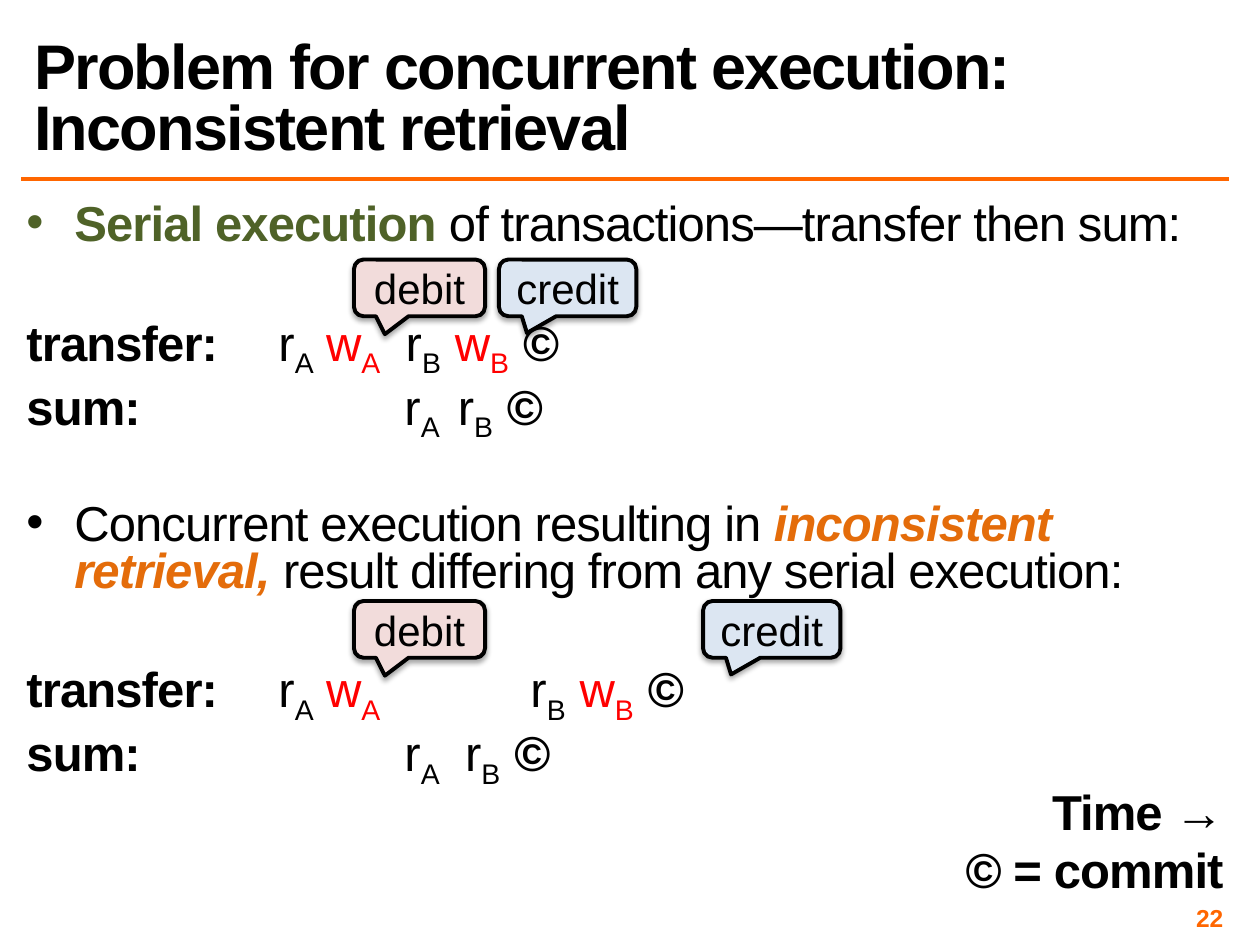
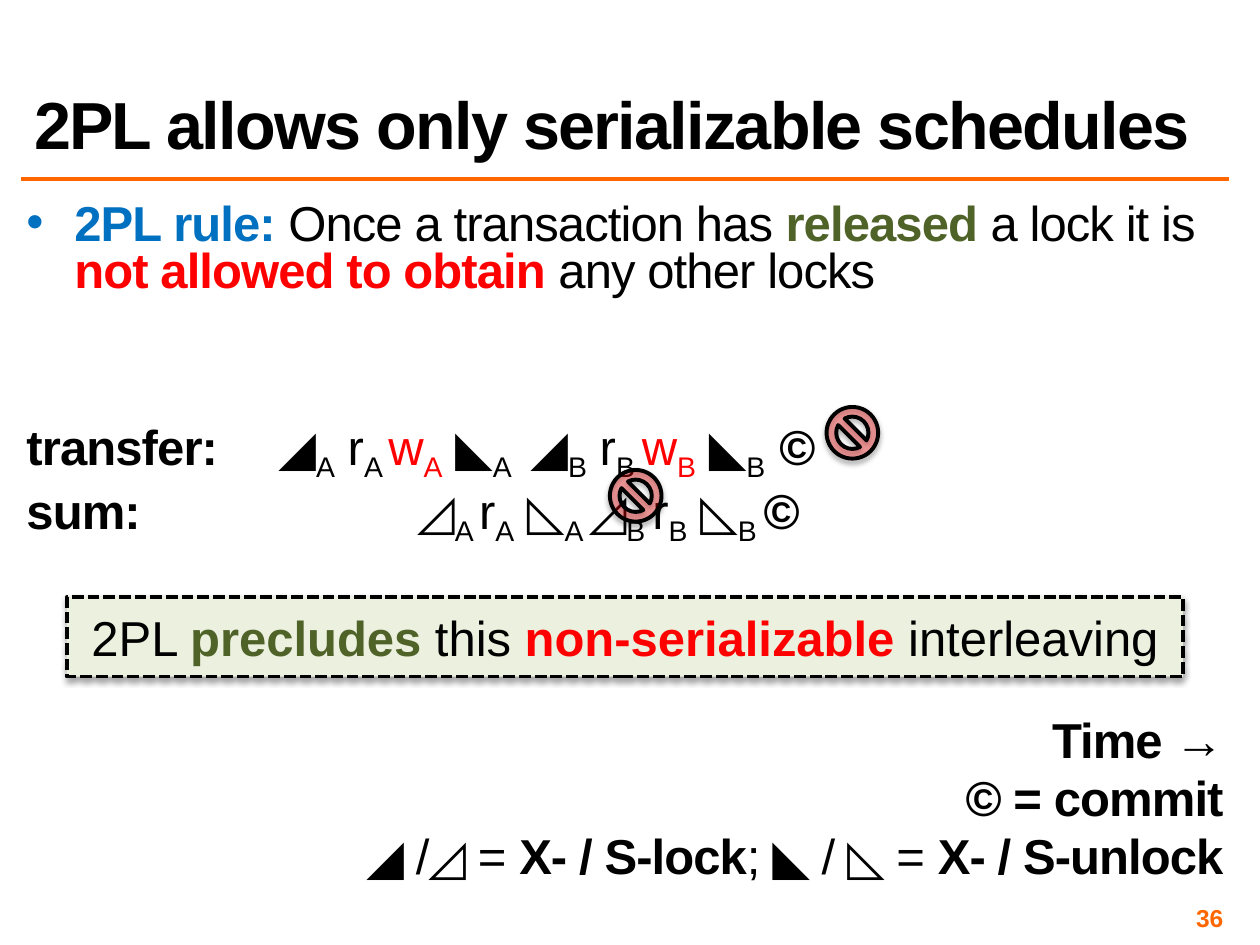
from lxml import etree
from pptx import Presentation
from pptx import util as u
from pptx.dml.color import RGBColor
from pptx.enum import dml, shapes, text
from pptx.oxml import ns

BLACK = RGBColor(0x00, 0x00, 0x00)
ORANGE = RGBColor(0xFF, 0x66, 0x00)
AMBER = RGBColor(0xE4, 0x6C, 0x0A)
GREEN = RGBColor(0x4F, 0x62, 0x28)
BLUE = RGBColor(0x00, 0x70, 0xC0)
RED = RGBColor(0xFF, 0x00, 0x00)
PINK = RGBColor(0xF2, 0xDC, 0xDB)
SKY = RGBColor(0xDC, 0xE6, 0xF2)
LIME = RGBColor(0xEB, 0xF1, 0xDE)

STEP = 6
BLANK = 32.5

BOLD = dict(bold=True)
SUB = dict(base=-25)
HOT = dict(color=RED)
LOW = dict(color=RED, base=-25)
PLAIN = {}


def write(para, words, size=28, color=BLACK, bold=False, italic=False, base=0, spc=0):
    run = para.add_run()
    run.text = words
    font = run.font
    font.name, font.size = "Arial", u.Pt(size)
    font.bold, font.italic = bold, italic
    font.color.rgb = color
    props = run._r.get_or_add_rPr()
    if base:
        props.set("baseline", str(base * 1000))
    if spc:
        props.set("spc", str(int(spc * 100)))


def style(shape, fill, alpha=100):
    shape.fill.solid()
    shape.fill.fore_color.rgb = fill
    shape.line.color.rgb = BLACK
    shape.line.width = u.Pt(2.25)
    if alpha < 100:
        tint = shape._element.spPr.find(ns.qn("a:solidFill"))[0]
        etree.SubElement(tint, ns.qn("a:alpha")).set("val", str(alpha * 1000))
    shape.shadow.inherit = False
    glow = shape._element.spPr.find(ns.qn("a:effectLst"))
    drop = etree.SubElement(glow, ns.qn("a:outerShdw"), blurRad=str(u.Pt(3.1)),
                            dist=str(u.Pt(1.8)), dir="5400000", rotWithShape="0")
    shade = etree.SubElement(drop, ns.qn("a:srgbClr"), val="000000")
    etree.SubElement(shade, ns.qn("a:alpha"), val="35000")


TIME = [("Time →", BOLD)]
DONE = [("© = commit", BOLD)]

pages = [
    dict(title="Problem for concurrent execution: Inconsistent retrieval", size=36, num="22", body=[
        ("list", 0, [], [("Serial execution ", dict(color=GREEN, bold=True)),
                         ("of transactions—transfer then sum:", PLAIN)]),
        ("row", 1, [1, 2], [("transfer: \t", BOLD), ("r", PLAIN), ("A  ", SUB), ("w", HOT), ("A", LOW),
                            ("  r", PLAIN), ("B  ", SUB), ("w", HOT), ("B  ", LOW), ("©", BOLD)]),
        ("row", 0, [1, 2], [("sum: \t\t", BOLD), ("r", PLAIN), ("A ", SUB), (" r", PLAIN),
                            ("B  ", SUB), ("©", BOLD)]),
        ("list", 1, [], [("Concurrent execution resulting in ", PLAIN),
                         ("inconsistent retrieval, ", dict(color=AMBER, bold=True, italic=True)),
                         ("result differing from any serial execution:", PLAIN)]),
        ("row", 1, [1, 2, 4], [("transfer: \t", BOLD), ("r", PLAIN), ("A  ", SUB), ("w", HOT), ("A", LOW),
                               ("  \tr", PLAIN), ("B  ", SUB), ("w", HOT), ("B  ", LOW), ("©", BOLD)]),
        ("row", 0, [1, 2], [("sum: \t\t", BOLD), ("r", PLAIN), ("A", SUB), ("  r", PLAIN),
                            ("B  ", SUB), ("©", BOLD)]),
        ("key", 0, [], TIME),
        ("key", 0, [], DONE),
    ]),
    dict(title="2PL allows only serializable schedules", size=38, num="36", body=[
        ("list", 0, [], [("2PL rule:", dict(color=BLUE, bold=True)), (" Once a transaction has ", PLAIN),
                         ("released ", dict(color=GREEN, bold=True)), ("a lock it is ", PLAIN),
                         ("not allowed to obtain ", dict(color=RED, bold=True)), ("any other locks", PLAIN)]),
        ("row", 2, [1, 2, 5], [("transfer:", BOLD), (" \t◢", PLAIN), ("A", SUB), (" r", PLAIN), ("A ", SUB),
                               ("w", HOT), ("A", LOW), (" ◣", PLAIN), ("A", SUB), (" \t◢", PLAIN), ("B", SUB),
                               (" r", PLAIN), ("B ", SUB), ("w", HOT), ("B", LOW), (" ◣", PLAIN),
                               ("B  ", SUB), ("©", BOLD)]),
        ("row", 0, [1, 2], [("sum:", BOLD), (" \t\t ◿", PLAIN), ("A ", SUB), ("r", PLAIN), ("A", SUB),
                            (" ◺", PLAIN), ("A ", SUB), ("◿", PLAIN), ("B ", SUB), ("r", PLAIN), ("B", SUB),
                            (" ◺", PLAIN), ("B ", SUB), ("©", BOLD)]),
        ("key", 3, [], TIME),
        ("key", 0, [], DONE),
        ("key", 0, [], [("◢ /◿ = ", PLAIN), ("X- / S-lock", BOLD), ("; ◣ / ◺ = ", PLAIN),
                        ("X- / S-unlock", BOLD)]),
    ]),
]

prs = Presentation()
prs.slide_width, prs.slide_height = u.Inches(10), u.Inches(7.5)
slides = []

for page in pages:
    slide = prs.slides.add_slide(prs.slide_layouts[1])
    slides.append(slide)

    rule = slide.shapes.add_connector(shapes.MSO_CONNECTOR.STRAIGHT, u.Inches(0.17), u.Inches(1.42),
                                      u.Inches(9.75), u.Inches(1.42))
    rule.line.color.rgb = ORANGE
    rule.line.width = u.Pt(2)
    etree.SubElement(rule._element.spPr, ns.qn("a:effectLst"))

    head, body = slide.shapes.title, slide.placeholders[1]
    foot = slide.shapes.add_textbox(u.Inches(7.42), u.Inches(7.17), u.Inches(2.33), u.Inches(0.23))
    for box, top, high in (head, 0.17, 1.17), (body, 1.58, 5.5):
        box.left, box.top = u.Inches(0.17), u.Inches(top)
        box.width, box.height = u.Inches(9.58), u.Inches(high)
    for box, anchor in ((head, text.MSO_ANCHOR.BOTTOM), (body, text.MSO_ANCHOR.TOP),
                        (foot, text.MSO_ANCHOR.MIDDLE)):
        frame = box.text_frame
        frame.word_wrap = True
        frame.auto_size = text.MSO_AUTO_SIZE.NONE
        frame.vertical_anchor = anchor
        if box is not head:
            frame.margin_left = frame.margin_right = u.Inches(0.04)
            frame.margin_top = frame.margin_bottom = u.Inches(0.04)

    para = head.text_frame.paragraphs[0]
    para.alignment = text.PP_ALIGN.LEFT
    para.line_spacing = 0.8
    write(para, page["title"], size=page["size"], bold=True, spc=-1)

    para = foot.text_frame.paragraphs[0]
    para.alignment = text.PP_ALIGN.RIGHT
    write(para, page["num"], size=14, color=ORANGE, bold=True)

    for i, (kind, gap, tabs, runs) in enumerate(page["body"]):
        frame = body.text_frame
        para = frame.add_paragraph() if i else frame.paragraphs[0]
        para.alignment = text.PP_ALIGN.RIGHT if kind == "key" else text.PP_ALIGN.LEFT
        para.line_spacing = 0.8
        para.space_before = u.Pt(STEP + gap * BLANK)
        props = para._p.get_or_add_pPr()
        hang = u.Inches(0.38) if kind == "list" else 0
        props.set("marL", str(hang))
        props.set("indent", str(-hang))
        props.set("defTabSz", str(u.Inches(1)))
        if kind == "list":
            etree.SubElement(props, ns.qn("a:buChar"), char="•")
        else:
            etree.SubElement(props, ns.qn("a:buNone"))
        if tabs:
            stops = etree.SubElement(props, ns.qn("a:tabLst"))
            for tab in tabs:
                etree.SubElement(stops, ns.qn("a:tab"), pos=str(u.Inches(tab)), algn="l")
        for words, form in runs:
            write(para, words, spc=-0.5, **form)

first, last = slides

debit = ("debit", 1.04, PINK, (-0.264, 0.816, 0.167))
credit = ("credit", 1.09, SKY, (-0.296, 0.795, 0.167))
for (name, wide, fill, tail), left, top in ((debit, 2.81, 2.06), (credit, 3.96, 2.06),
                                            (debit, 2.81, 4.77), (credit, 5.58, 4.77)):
    call = first.shapes.add_shape(shapes.MSO_SHAPE.ROUNDED_RECTANGULAR_CALLOUT, u.Inches(left),
                                  u.Inches(top), u.Inches(wide), u.Inches(0.45))
    for i, value in enumerate(tail):
        call.adjustments[i] = value
    style(call, fill)
    call.text_frame.vertical_anchor = text.MSO_ANCHOR.MIDDLE
    para = call.text_frame.paragraphs[0]
    para.alignment = text.PP_ALIGN.CENTER
    write(para, name, size=24)

note = last.shapes.add_shape(shapes.MSO_SHAPE.RECTANGLE, u.Inches(0.53), u.Inches(4.74),
                             u.Inches(8.86), u.Inches(0.63))
style(note, LIME)
note.line.dash_style = dml.MSO_LINE.SQUARE_DOT
note.text_frame.vertical_anchor = text.MSO_ANCHOR.MIDDLE
para = note.text_frame.paragraphs[0]
para.alignment = text.PP_ALIGN.CENTER
for words, form in (("2PL ", PLAIN), ("precludes ", dict(color=GREEN, bold=True)), ("this ", PLAIN),
                    ("non-serializable ", dict(color=RED, bold=True)), ("interleaving", PLAIN)):
    write(para, words, **form)

for left, top in (6.56, 3.23), (4.84, 3.73):
    ban = last.shapes.add_shape(shapes.MSO_SHAPE.NO_SYMBOL, u.Inches(left), u.Inches(top),
                                u.Inches(0.41), u.Inches(0.41))
    style(ban, RED, alpha=33)

prs.save("out.pptx")
